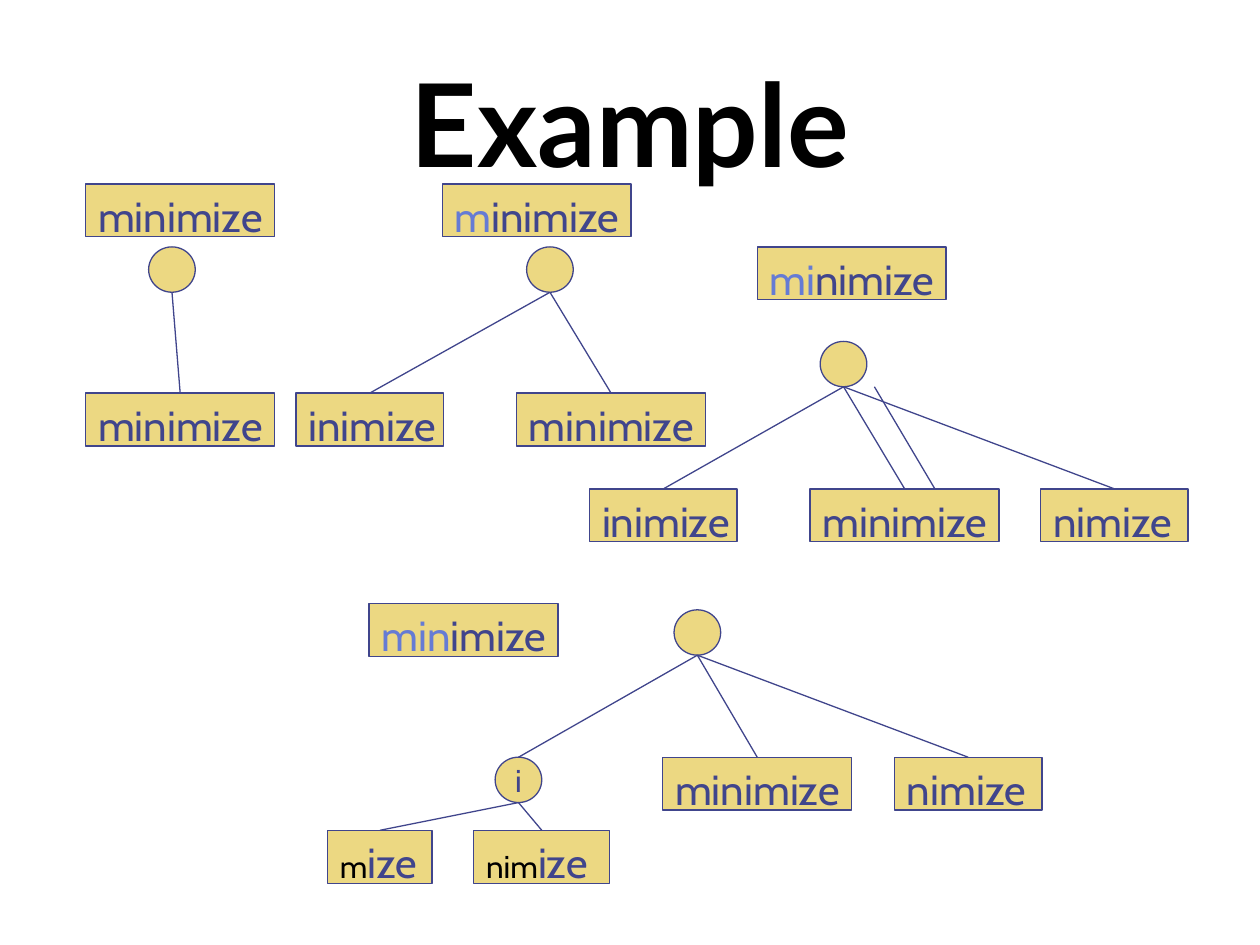
from pptx import Presentation
from pptx import util as u
from pptx.dml.color import RGBColor
from pptx.enum import shapes, text
from pptx.oxml.ns import qn
from lxml import etree

# Content: each word is (left, top, runs); a run is (text, style)
HEAD = "Example"
WORDS = [
    (0.68, 1.46, [("minimize", "body")]),
    (3.51, 1.46, [("m", "done"), ("inimize", "body")]),
    (6.01, 1.96, [("mi", "done"), ("nimize", "body")]),
    (2.93, 4.79, [("min", "done"), ("imize", "body")]),
]
FULL = [("minimize", "body")]
TAIL = [("inimize", "body")]
REST = [("nimize", "body")]
# A node is (left, top, label, leaf row, children); a leaf is (left, width, runs)
INNER = (3.93, 6.01, "i", 6.59, [
    (2.6, 0.83, [("m", "small"), ("ize", "body")]),
    (3.76, 1.08, [("nim", "small"), ("ize", "body")]),
])
TREES = [
    (1.18, 1.96, "", 3.12, [(0.68, 1.5, FULL)]),
    (4.18, 1.96, "", 3.12, [(2.35, 1.17, TAIL), (4.1, 1.5, FULL)]),
    (6.51, 2.71, "", 3.88, [(4.68, 1.17, TAIL), (6.43, 1.5, FULL),
                            (8.26, 1.17, REST)]),
    (5.35, 4.84, "", 6.01, [INNER, (5.26, 1.5, FULL), (7.1, 1.17, REST)]),
]
LOOSE = (6.94, 3.07, 7.42, 3.88)

THEME = {
    "fill": "ECD882", "line": "40458C", "width": 0.75,
    "head": ("Lato", 66, "000000"),
    "body": ("Cabin", 24, "40458C"),
    "done": ("Cabin", 24, "657BD4"),
    "small": ("Cabin", 18, "000000"),
    "node": ("Cabin", 18, "40458C"),
}
WIDE, HIGH = 1.5, 0.42
DISC_W, DISC_H = 0.37, 0.36


def paint(run, style):
    name, size, color = THEME[style]
    run.font.name, run.font.size = name, u.Pt(size)
    run.font.color.rgb = RGBColor.from_string(color)


def stroke(line):
    line.color.rgb = RGBColor.from_string(THEME["line"])
    line.width = u.Pt(THEME["width"])


def solid(home, kind, *box):
    shape = home.add_shape(kind, *map(u.Inches, box))
    shape.shadow.inherit = False
    shape.fill.solid()
    shape.fill.fore_color.rgb = RGBColor.from_string(THEME["fill"])
    stroke(shape.line)
    shape.text_frame.word_wrap = False
    return shape


def write(shape, runs, align, anchor):
    shape.text_frame.vertical_anchor = anchor
    para = shape.text_frame.paragraphs[0]
    para.alignment = align
    for words, style in runs:
        run = para.add_run()
        run.text = words
        paint(run, style)


def word(home, left, top, width, runs):
    box = solid(home, shapes.MSO_SHAPE.RECTANGLE, left, top, width, HIGH)
    write(box, runs, text.PP_ALIGN.LEFT, text.MSO_ANCHOR.TOP)
    return box


def edge(home, *ends):
    line = home.add_connector(shapes.MSO_CONNECTOR.STRAIGHT, *ends)
    stroke(line.line)
    etree.SubElement(line._element.spPr, qn("a:effectLst"))
    return line


def tree(home, left, top, label, row, kids):
    """Draw a node with its children and return the node's disc."""
    disc = solid(home, shapes.MSO_SHAPE.OVAL, left, top, DISC_W, DISC_H)
    if label:
        write(disc, [(label, "node")], text.PP_ALIGN.CENTER,
              text.MSO_ANCHOR.MIDDLE)
    x, y = disc.left + disc.width // 2, disc.top + disc.height
    for kid in kids:
        if len(kid) == 5:
            child = tree(home, *kid)
        else:
            start, width, runs = kid
            child = word(home, start, row, width, runs)
        line = edge(home, x, y, child.left + child.width // 2, child.top)
        line.end_connect(child, 0)
    return disc


def main():
    deck = Presentation()
    deck.slide_width, deck.slide_height = u.Inches(10), u.Inches(7.5)
    slide = deck.slides.add_slide(deck.slide_layouts[5])

    # Title
    title = slide.shapes.title
    title.left, title.top = u.Inches(0.5), u.Inches(0.34)
    title.width, title.height = u.Inches(9), u.Inches(1.25)
    title.text_frame.text = HEAD
    title.text_frame.vertical_anchor = text.MSO_ANCHOR.MIDDLE
    para = title.text_frame.paragraphs[0]
    para.alignment = text.PP_ALIGN.CENTER
    paint(para.runs[0], "head")
    para.runs[0].font.bold = True

    # Words with the prefix read so far
    for left, top, runs in WORDS:
        word(slide.shapes, left, top, WIDE, runs)

    # Suffix trees, one group each
    for root in TREES:
        tree(slide.shapes.add_group_shape().shapes, *root)

    # Second line to the full word in the third tree
    edge(slide.shapes, *map(u.Inches, LOOSE))
    deck.save("out.pptx")


if __name__ == "__main__":
    main()
